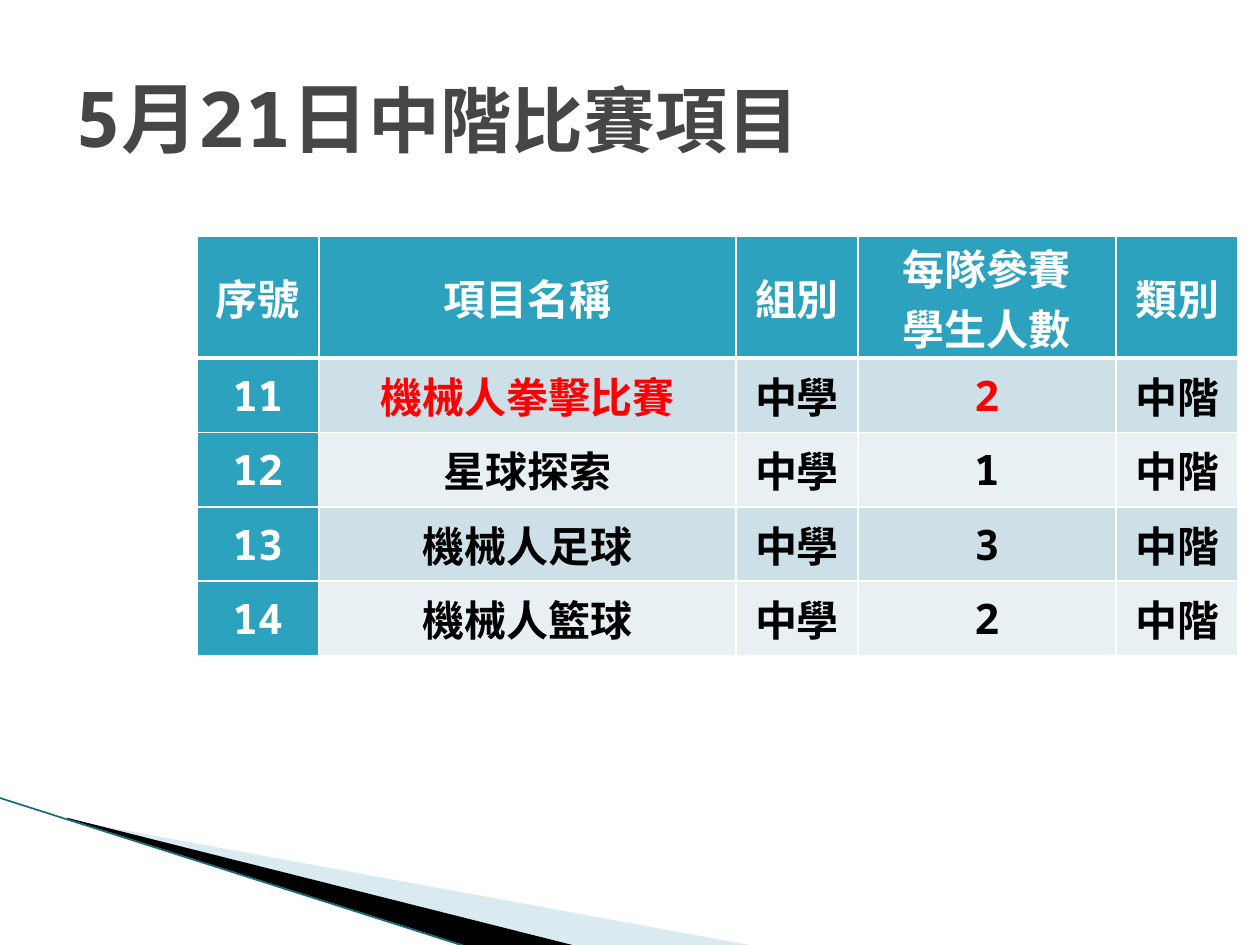
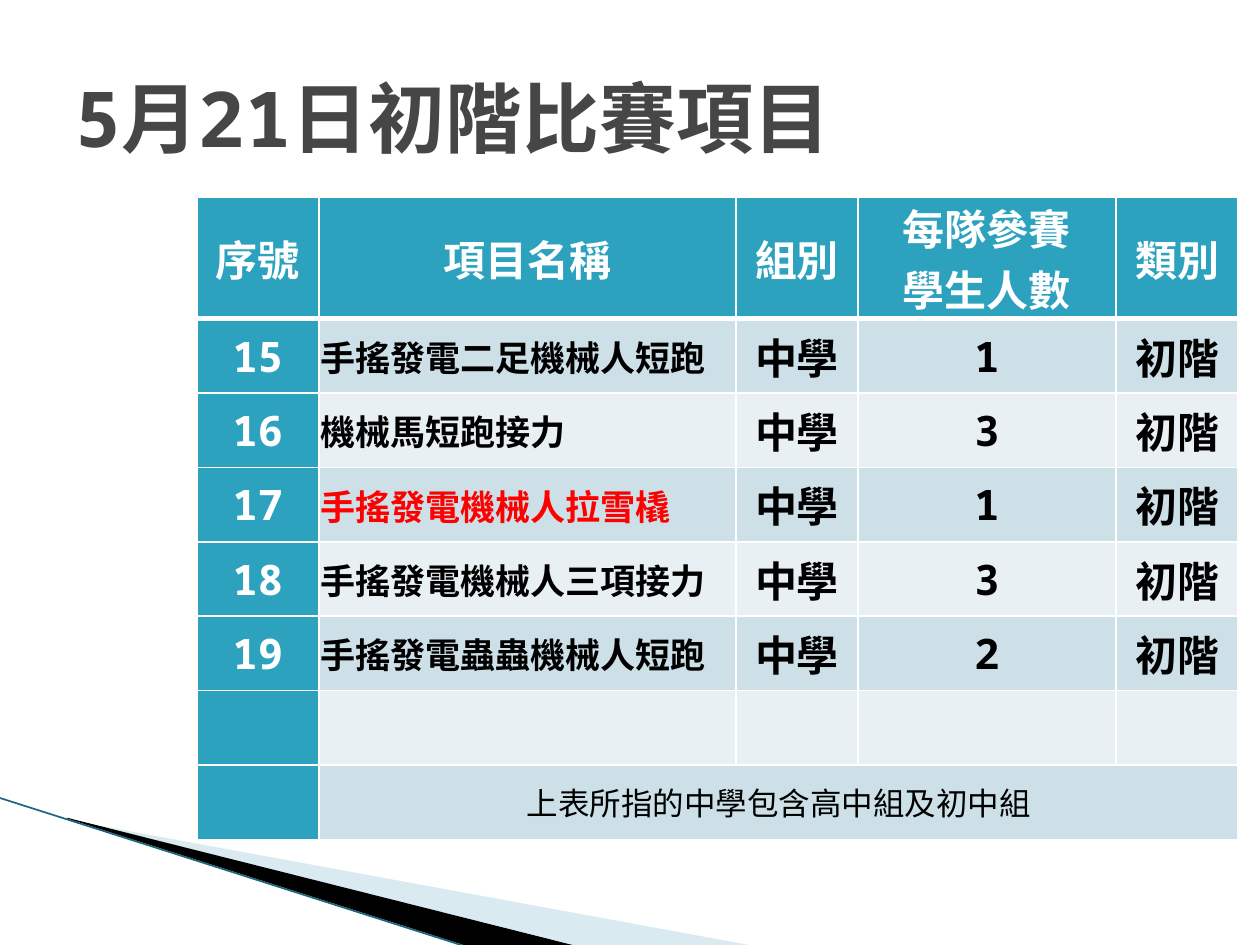
import dataclasses

import lxml.etree
import pptx
import pptx.dml.color
import pptx.enum.shapes
import pptx.enum.text
import pptx.oxml.ns
import pptx.util

Pt = pptx.util.Pt
ALIGN = pptx.enum.text.PP_ALIGN
ANCHOR = pptx.enum.text.MSO_ANCHOR


@dataclasses.dataclass(frozen=True)
class Theme:
    """Colours, fonts and type sizes shared by the pages."""
    white: str = "FFFFFF"
    black: str = "000000"
    title: str = "464646"
    accent: str = "2DA2BF"
    band_odd: str = "CDE0E8"
    band_even: str = "E8F0F4"
    highlight: str = "FF0000"
    swoosh: str = "A0CBDC"
    edge: str = "17697B"
    mono: str = "Noto Sans Mono"
    han: str = "Noto Sans CJK TC"
    title_size: float = 44
    title_small: float = 41
    cell_size: float = 24
    name_size: float = 20
    note_size: float = 18


THEME = Theme()
HEADINGS = ["序號", "項目名稱", "組別", "每隊參賽\n學生人數", "類別"]
COLUMN_WIDTHS = [69.7, 238.4, 69.7, 147.5, 69.8]
ROW_HEIGHT = 42.5
TABLE_LEFT = 112.5
GROUP = "中學"


def rgb(code):
    """Turn a hex code into a colour."""
    return pptx.dml.color.RGBColor.from_string(code)


def apply(target, values):
    """Set each named attribute on the target."""
    for name, value in values.items():
        setattr(target, name, value)


def child(parent, tag, **attributes):
    """Add a DrawingML child element."""
    return lxml.etree.SubElement(parent, pptx.oxml.ns.qn(tag), attributes)


def add_span(para, text, size, color, bold=True, font=THEME.mono):
    """Add a formatted run with Latin and Chinese fonts."""
    span = para.add_run()
    span.text = text
    apply(span.font, {"size": Pt(size), "bold": bold, "name": font})
    span.font.color.rgb = rgb(color)
    child(span.font._element, "a:ea", typeface=THEME.han)


def set_title(page, parts):
    """Place the title and fill it with (text, size) parts."""
    box = page.shapes.title
    apply(box, {"left": Pt(36), "top": Pt(21.6), "width": Pt(648), "height": Pt(90)})
    apply(box.text_frame, {"vertical_anchor": ANCHOR.MIDDLE, "word_wrap": True,
                           "auto_size": pptx.enum.text.MSO_AUTO_SIZE.NONE})
    para = box.text_frame.paragraphs[0]
    para.alignment = ALIGN.LEFT
    for text, size in parts:
        add_span(para, text, size, THEME.title)


def add_wedge(page, points, color, opacity=100):
    """Draw a filled outline through the points."""
    corners = [(Pt(x), Pt(y)) for x, y in points]
    builder = page.shapes.build_freeform(*corners[0], scale=1.0)
    builder.add_line_segments(corners[1:], close=True)
    wedge = builder.convert_to_shape()
    wedge.shadow.inherit = False
    wedge.line.fill.background()
    wedge.fill.solid()
    wedge.fill.fore_color.rgb = rgb(color)
    if opacity < 100:
        paint = wedge._element.spPr.find(".//" + pptx.oxml.ns.qn("a:srgbClr"))
        child(paint, "a:alpha", val=str(opacity * 1000))


def add_corner(page):
    """Draw the swoosh at the lower left."""
    add_wedge(page, [(39.6, 468.7), (428, 540), (328, 540), (39.6, 468)],
              THEME.swoosh, 40)
    add_wedge(page, [(38.2, 467.3), (329, 540.5), (268, 541), (38.9, 468)], THEME.black)
    edge = page.shapes.add_connector(pptx.enum.shapes.MSO_CONNECTOR.STRAIGHT,
                                     Pt(-0.7), Pt(455.8), Pt(267.8), Pt(541.4))
    edge.line.color.rgb = rgb(THEME.edge)
    edge.line.width = Pt(0.95)
    child(edge._element.spPr, "a:effectLst")


def paint_cell(cell, color, bottom=1):
    """Give a cell its white borders and its fill."""
    properties = cell._tc.get_or_add_tcPr()
    for side, width in {"L": 1, "R": 1, "T": 1, "B": bottom}.items():
        border = child(properties, f"a:ln{side}", w=str(Pt(width)))
        child(child(border, "a:solidFill"), "a:srgbClr", val=THEME.white)
    cell.fill.solid()
    cell.fill.fore_color.rgb = rgb(color)


def write_cell(cell, text, color, side=5, before=0, align=ALIGN.CENTER,
               size=THEME.cell_size, **look):
    """Write one paragraph per line of text into a cell."""
    apply(cell, {"vertical_anchor": ANCHOR.MIDDLE, "margin_left": Pt(side),
                 "margin_right": Pt(side), "margin_top": 0, "margin_bottom": 0})
    for index, line in enumerate(text.split("\n")):
        frame = cell.text_frame
        para = frame.add_paragraph() if index else frame.paragraphs[0]
        apply(para, {"alignment": align, "space_before": Pt(before)})
        add_span(para, line, size, color, **look)


def add_events(page, top, header_height, level, first, events, name_look,
               highlights, spare_rows=0):
    """Add the table of events, numbered from first; return it."""
    body_rows = len(events) + spare_rows
    frame = page.shapes.add_table(
        body_rows + 1, len(HEADINGS), Pt(TABLE_LEFT), Pt(top),
        Pt(sum(COLUMN_WIDTHS)), Pt(header_height + body_rows * ROW_HEIGHT))
    table = frame.table
    for column, width in zip(table.columns, COLUMN_WIDTHS):
        column.width = Pt(width)
    for index, row in enumerate(table.rows):
        row.height = Pt(ROW_HEIGHT if index else header_height)
        band = THEME.band_odd if index % 2 else THEME.band_even
        for place, cell in enumerate(row.cells):
            accented = index == 0 or place == 0
            paint_cell(cell, THEME.accent if accented else band, 1 if index else 3)
    for place, heading in enumerate(HEADINGS):
        write_cell(table.cell(0, place), heading, THEME.white, side=1.4)
    for index, (name, team) in enumerate(events, 1):
        values = [str(first + index - 1), name, GROUP, str(team), level]
        for place, value in enumerate(values):
            color = THEME.white if place == 0 else THEME.black
            if (index, place) in highlights:
                color = THEME.highlight
            look = name_look if place == 1 else {"before": 3}
            write_cell(table.cell(index, place), value, color, **look)
    return table


def add_page(deck, title):
    """Add a page with the shared corner and a title."""
    page = deck.slides.add_slide(deck.slide_layouts[5])
    add_corner(page)
    set_title(page, title)
    return page


def main():
    """Build both pages and save the deck."""
    deck = pptx.Presentation()
    apply(deck, {"slide_width": Pt(720), "slide_height": Pt(540)})

    page = add_page(deck, [("5月21日", THEME.title_size),
                           ("中階比賽項目", THEME.title_small)])
    middle_events = [("機械人拳擊比賽", 2), ("星球探索", 1),
                     ("機械人足球", 3), ("機械人籃球", 2)]
    add_events(page, 135, 57.6, "中階", 11, middle_events, {}, {(1, 1), (1, 3)})

    page = add_page(deck, [("5月21日初階比賽項目", THEME.title_size)])
    junior_events = [("手搖發電二足機械人短跑", 1), ("機械馬短跑接力", 3),
                     ("手搖發電機械人拉雪橇", 1), ("手搖發電機械人三項接力", 3),
                     ("手搖發電蟲蟲機械人短跑", 2)]
    name_look = {"side": 0.7, "align": ALIGN.LEFT, "size": THEME.name_size,
                 "font": THEME.han}
    table = add_events(page, 112.5, 56.2, "初階", 15, junior_events, name_look,
                       {(3, 1)}, spare_rows=2)
    note = table.cell(7, 1)
    note.merge(table.cell(7, 4))
    write_cell(note, "上表所指的中學包含高中組及初中組", THEME.black, before=3,
               size=THEME.note_size, bold=False)

    deck.save("out.pptx")


if __name__ == "__main__":
    main()
